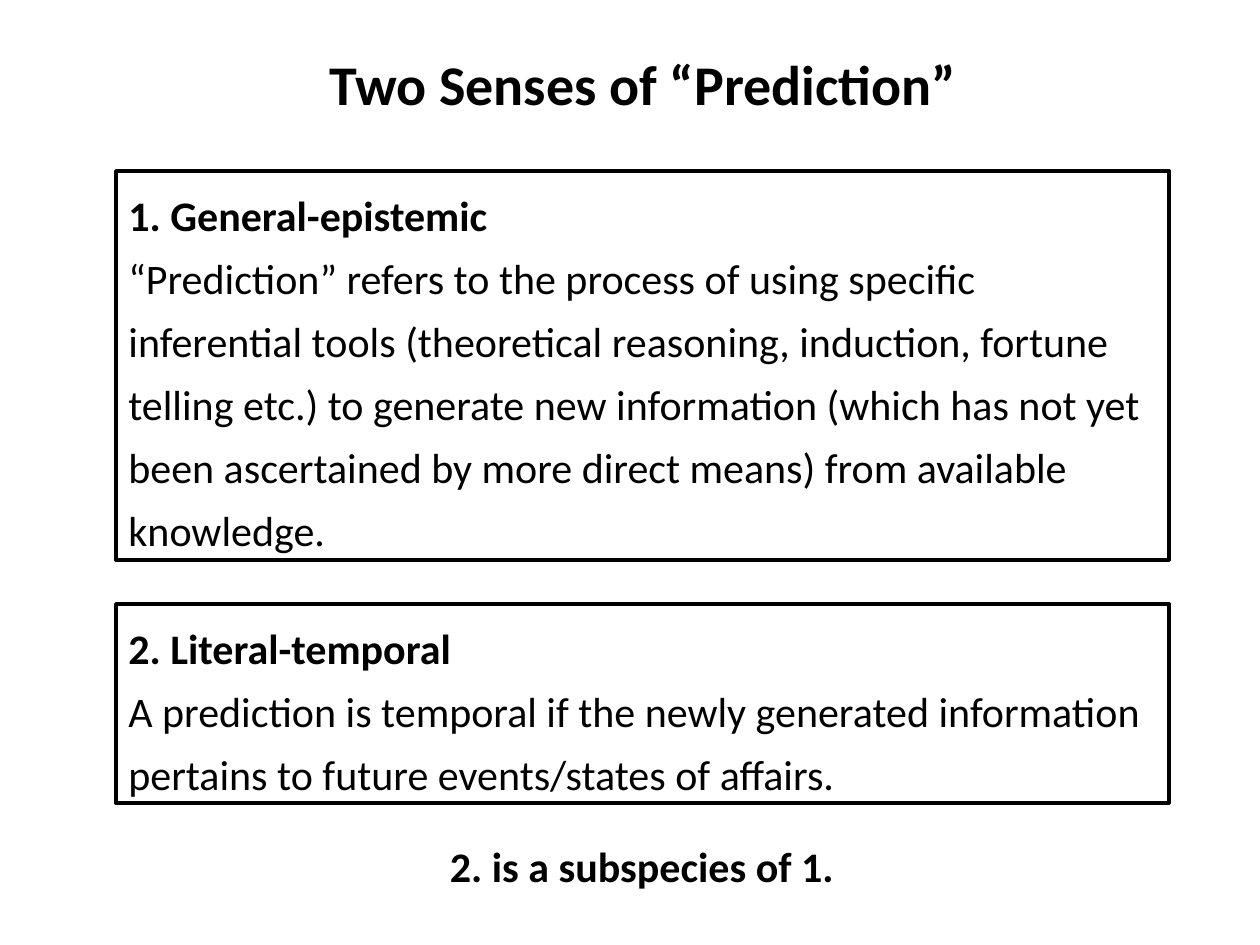
from pptx import Presentation
from pptx.dml.color import RGBColor
from pptx.enum.shapes import MSO_SHAPE
from pptx.enum.text import MSO_ANCHOR as Anchor, MSO_AUTO_SIZE as AutoSize, PP_ALIGN as Align
from pptx.util import Emu, Pt

COLORS = {"ink": "000000", "paper": "FFFFFF"}
FRAME = {"word_wrap": True, "auto_size": AutoSize.SHAPE_TO_FIT_TEXT, "vertical_anchor": Anchor.TOP}


def px(*lengths):
    return [Emu(round(length * 914400 / 126)) for length in lengths]


def write(frame, lines, size, align, spacing):
    for key, value in FRAME.items():
        setattr(frame, key, value)
    for index, (words, bold) in enumerate(lines):
        line = frame.add_paragraph() if index else frame.paragraphs[0]
        for key, value in {"alignment": align, "line_spacing": spacing, "space_before": Pt(0)}.items():
            setattr(line, key, value)
        run = line.add_run()
        run.text = words
        for key, value in {"name": "Calibri", "size": Pt(size), "bold": bold}.items():
            setattr(run.font, key, value)
        run.font.color.rgb = RGBColor.from_string(COLORS["ink"])


deck = Presentation()
deck.slide_width, deck.slide_height = px(1260, 945)
slide = deck.slides.add_slide(deck.slide_layouts[5])

title = slide.shapes.title
title.left, title.top, title.width, title.height = px(156, 43, 974, 81)
write(title.text_frame, [("Two Senses of “Prediction”", True)], 32, Align.CENTER, 1.0)

senses = [
    (171, 389, "1. General-epistemic",
     "“Prediction” refers to the process of using specific inferential tools "
     "(theoretical reasoning, induction, fortune telling etc.) to generate new information "
     "(which has not yet been ascertained by more direct means) from available knowledge."),
    (604, 199, "2. Literal-temporal",
     "A prediction is temporal if the newly generated information pertains to "
     "future events/states of affairs."),
]
for top, height, heading, definition in senses:
    sense = slide.shapes.add_shape(MSO_SHAPE.RECTANGLE, *px(116, top, 1053, height))
    sense.shadow.inherit = False
    sense.fill.solid()
    sense.fill.fore_color.rgb = RGBColor.from_string(COLORS["paper"])
    sense.line.color.rgb = RGBColor.from_string(COLORS["ink"])
    sense.line.width = Pt(2)
    write(sense.text_frame, [(heading, True), (definition, False)], 24, Align.LEFT, 1.25)

conclusion = slide.shapes.add_textbox(*px(234, 834, 816, 63))
write(conclusion.text_frame, [("2. is a subspecies of 1.", True)], 24, Align.CENTER, 1.0)

deck.save("out.pptx")
